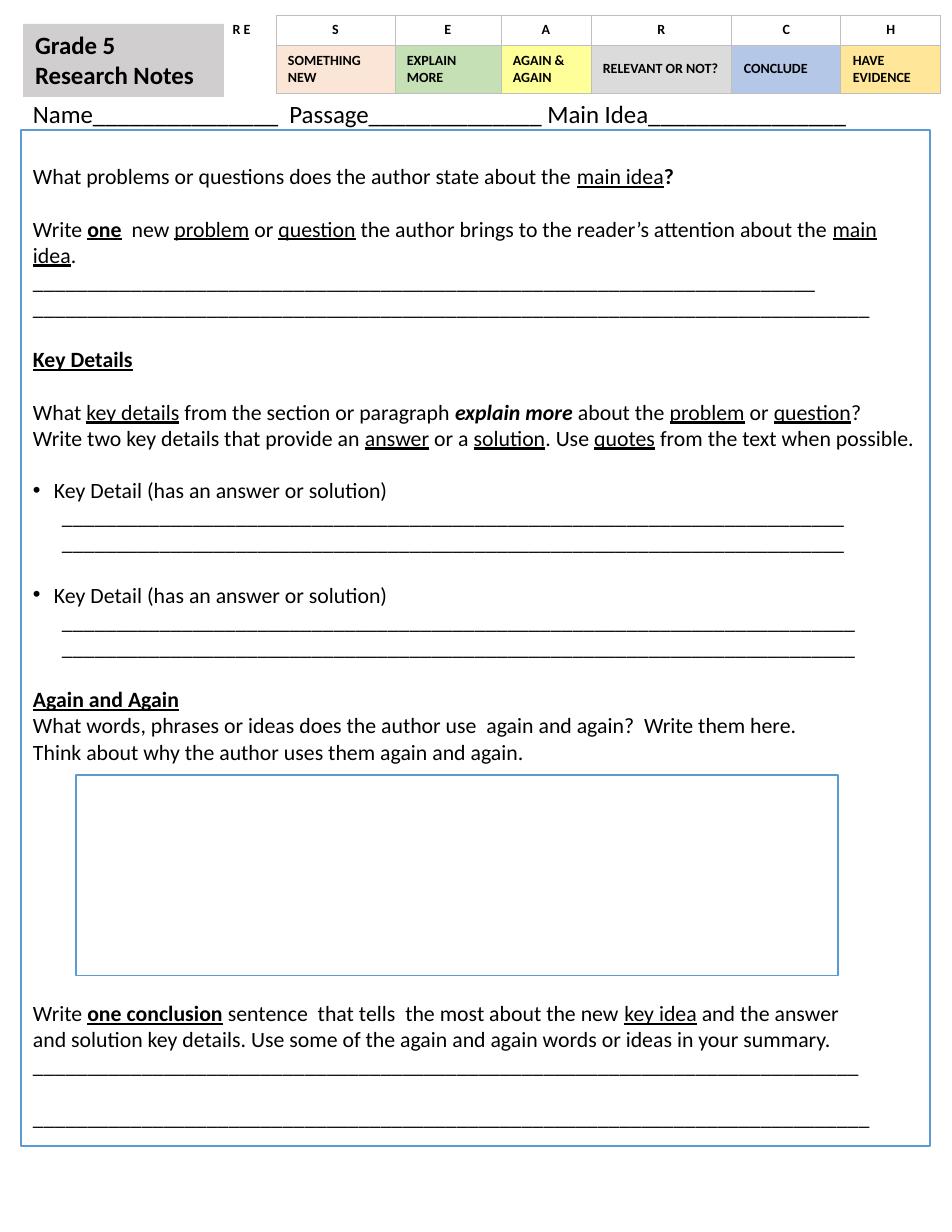
import dataclasses

import pptx
import pptx.dml.color
import pptx.enum.shapes
import pptx.enum.text
import pptx.oxml
import pptx.oxml.ns
import pptx.util

PX = 914400 / 112
ANCHOR = pptx.enum.text.MSO_ANCHOR
ALIGN = pptx.enum.text.PP_ALIGN
FLAGS = {"b": "bold", "i": "italic", "u": "underline"}


@dataclasses.dataclass(frozen=True)
class Theme:
    font: str = "Calibri"
    ink: str = "000000"
    paper: str = "FFFFFF"
    outline: str = "5B9BD5"
    grid: str = "BFBFBF"
    heading_fill: str = "D0CECE"
    heading: int = 16
    body: int = 14
    label: int = 9
    gap: float = 16.8  # one empty line of body text, in points
    hairline: float = 0.75
    grid_line: float = 0.5


def px(length):
    return pptx.util.Emu(round(length * PX))


def rgb(value):
    return pptx.dml.color.RGBColor.from_string(value)


def apply(target, values):
    for name, value in values.items():
        setattr(target, name, value)


class Worksheet:
    def __init__(self, slide, theme):
        self.slide = slide
        self.theme = theme

    def place(self, shape, box, fill=None, line=None):
        apply(shape, dict(zip(("left", "top", "width", "height"), map(px, box))))
        if fill:
            shape.fill.solid()
            shape.fill.fore_color.rgb = rgb(fill)
        else:
            shape.fill.background()
        if line:
            shape.line.color.rgb = rgb(line)
            shape.line.width = pptx.util.Pt(self.theme.hairline)
        else:
            shape.line.fill.background()

    def frame(self, shape, top=6):
        apply(shape.text_frame, {
            "word_wrap": True, "auto_size": pptx.enum.text.MSO_AUTO_SIZE.NONE,
            "vertical_anchor": ANCHOR.TOP, "margin_left": px(12), "margin_right": px(12),
            "margin_top": px(top), "margin_bottom": px(6)})
        return shape.text_frame

    def add_runs(self, paragraph, parts, size, bold=False, align=ALIGN.LEFT):
        paragraph.alignment = align
        for part in parts:
            text, flags = (part, "") if isinstance(part, str) else part
            run = paragraph.add_run()
            run.text = text
            apply(run.font, {"name": self.theme.font, "size": pptx.util.Pt(size),
                             **{name: flag in flags for flag, name in FLAGS.items()}})
            run.font.bold = bold or "b" in flags
            run.font.color.rgb = rgb(self.theme.ink)

    def heading(self, text, box):
        title = self.slide.shapes.title
        self.place(title, box, self.theme.heading_fill)
        self.add_runs(self.frame(title).paragraphs[0], [text], self.theme.heading, bold=True)
        self.slide.shapes.element.append(title.element)  # in front of the table

    def text_line(self, text, box):
        shape = self.slide.shapes.add_textbox(*map(px, box))
        self.add_runs(self.frame(shape).paragraphs[0], [text], self.theme.heading)

    def body(self, entries, box, top):
        shape = self.slide.placeholders[1]
        self.place(shape, box, self.theme.paper, self.theme.outline)
        frame = self.frame(shape, top)
        for index, (gaps, kind, parts) in enumerate(entries):
            paragraph = frame.add_paragraph() if index else frame.paragraphs[0]
            apply(paragraph, {"space_before": pptx.util.Pt(gaps * self.theme.gap),
                              "space_after": pptx.util.Pt(0), "line_spacing": 1.0})
            self.add_runs(paragraph, parts, self.theme.body)
            self.indent(paragraph, kind)

    def indent(self, paragraph, kind):
        left, first = {"plain": (0, 0), "bullet": (21, -21), "answer": (29, 0)}[kind]
        properties = paragraph._p.get_or_add_pPr()
        properties.set("marL", str(px(left)))
        properties.set("indent", str(px(first)))
        bullet = '<a:buChar %s char="•"/>' if kind == "bullet" else "<a:buNone %s/>"
        properties.append(pptx.oxml.parse_xml(bullet % pptx.oxml.ns.nsdecls("a")))

    def cell(self, cell, text, fill, align, anchor=ANCHOR.MIDDLE, sides="LRTB"):
        apply(cell, {"margin_left": px(12), "margin_right": px(12), "margin_top": px(6),
                     "margin_bottom": px(6), "vertical_anchor": anchor})
        properties = cell._tc.get_or_add_tcPr()
        for side in sides:
            properties.append(pptx.oxml.parse_xml(
                f'<a:ln{side} {pptx.oxml.ns.nsdecls("a")} w="{pptx.util.Pt(self.theme.grid_line)}">'
                f'<a:solidFill><a:srgbClr val="{self.theme.grid}"/></a:solidFill></a:ln{side}>'))
        cell.fill.solid()
        cell.fill.fore_color.rgb = rgb(fill)
        self.add_runs(cell.text_frame.paragraphs[0], [text], self.theme.label, True, align)

    def key_table(self, prefix, steps, left, top, first_width, heights):
        widths = [first_width] + [step[3] for step in steps]
        table = self.slide.shapes.add_table(
            2, len(widths), *map(px, (left, top, sum(widths), sum(heights)))).table
        apply(table, {"first_row": False, "horz_banding": False})
        for column, width in zip(table.columns, widths):
            column.width = px(width)
        for row, height in zip(table.rows, heights):
            row.height = px(height)
        table.cell(0, 0).merge(table.cell(1, 0))
        self.cell(table.cell(0, 0), prefix, self.theme.paper, ALIGN.CENTER, ANCHOR.TOP, "R")
        for index, (letter, label, fill, _) in enumerate(steps, 1):
            self.cell(table.cell(0, index), letter, self.theme.paper, ALIGN.CENTER)
            self.cell(table.cell(1, index), label, fill, ALIGN.LEFT)

    def answer_box(self, box):
        shape = self.slide.shapes.add_shape(
            pptx.enum.shapes.MSO_SHAPE.RECTANGLE, *map(px, box))
        shape.shadow.inherit = False
        self.place(shape, box, line=self.theme.outline)


# Letter, meaning, colour and column width of each step
STEPS = [
    ("S", "SOMETHING NEW", "FBE5D6", 119),
    ("E", "EXPLAIN MORE", "C5E0B4", 106),
    ("A", "AGAIN & AGAIN", "FFFF99", 90),
    ("R", "RELEVANT OR NOT?", "DBDBDB", 141),
    ("C", "CONCLUDE", "B4C7E7", 109),
    ("H", "HAVE EVIDENCE", "FFE699", 100),
]


def rule(length, gaps=0, kind="plain"):
    return gaps, kind, ["_" * length]


def key_detail(length):
    return [(1, "bullet", ["Key Detail (has an answer or solution)"]),
            rule(length, kind="answer"), rule(length, kind="answer")]


# Empty lines above, kind of paragraph, runs
QUESTIONS = [
    (0, "plain", ["What problems or questions does the author state about the ",
                  ("main idea", "u"), ("?", "b")]),
    (1, "plain", ["Write ", ("one", "bu"), "  new ", ("problem", "u"), " or ",
                  ("question", "u"),
                  " the author brings to the reader’s attention about the ",
                  ("main idea", "u"), "."]),
    rule(72),
    rule(77),
    (1, "plain", [("Key Details", "bu")]),
    (1, "plain", ["What ", ("key details", "u"), " from the section or paragraph ",
                  ("explain more ", "bi"), "about the ", ("problem", "u"), " or ",
                  ("question", "u"), "?"]),
    (0, "plain", ["Write two key details that provide an ", ("answer", "u"), " or a ",
                  ("solution", "u"), ". Use ", ("quotes", "u"),
                  " from the text when possible."]),
    *key_detail(72),
    *key_detail(73),
    (1, "plain", [("Again and Again", "bu")]),
    (0, "plain", ["What words, phrases or ideas does the author use  again and again?"
                  "  Write them here."]),
    (0, "plain", ["Think about why the author uses them again and again."]),
    (9, "plain", ["Write ", ("one conclusion", "bu"),
                  " sentence  that tells  the most about the new ", ("key idea", "u"),
                  " and the answer"]),
    (0, "plain", ["and solution key details. Use some of the again and again words or"
                  " ideas in your summary."]),
    rule(76),
    rule(77, gaps=1),
]


def main():
    presentation = pptx.Presentation()
    apply(presentation, {"slide_width": px(952), "slide_height": px(1232)})
    slide = presentation.slides.add_slide(presentation.slide_layouts[1])
    sheet = Worksheet(slide, Theme())

    # Questions
    sheet.body(QUESTIONS, (21, 130, 909, 1016), top=33)
    # Header
    sheet.text_line(f"Name{'_' * 15}  Passage{'_' * 14} Main Idea{'_' * 16}",
                    (21, 93, 899, 43))
    sheet.key_table("R E", STEPS, 207, 15, 69, (30, 48))
    sheet.heading("Grade 5 Research Notes", (23, 24, 201, 73))
    # Space for repeated words
    sheet.answer_box((76, 775, 762, 201))

    presentation.save("out.pptx")


if __name__ == "__main__":
    main()
